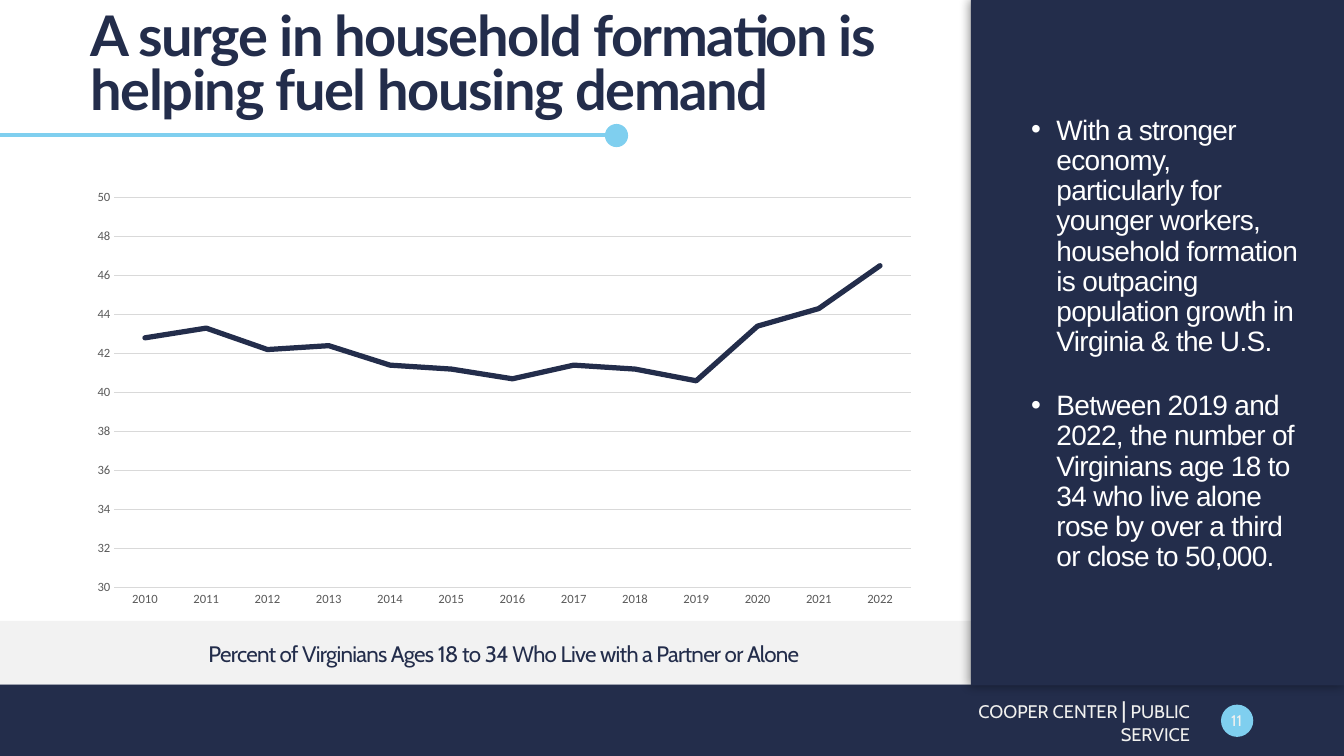
from lxml import etree
from pptx import Presentation
from pptx.chart.data import CategoryChartData
from pptx.dml.color import RGBColor
from pptx.enum.chart import XL_CHART_TYPE, XL_TICK_MARK
from pptx.enum.shapes import MSO_CONNECTOR, MSO_SHAPE
from pptx.enum.text import MSO_ANCHOR, PP_ALIGN
from pptx.oxml.ns import qn
from pptx.util import Emu, Pt

RECT, OVAL = MSO_SHAPE.RECTANGLE, MSO_SHAPE.OVAL
STRAIGHT = MSO_CONNECTOR.STRAIGHT
LINE = XL_CHART_TYPE.LINE
NO_TICK = XL_TICK_MARK.NONE
LEFT, CENTER, RIGHT = PP_ALIGN.LEFT, PP_ALIGN.CENTER, PP_ALIGN.RIGHT
TOP, MIDDLE, BOTTOM = MSO_ANCHOR.TOP, MSO_ANCHOR.MIDDLE, MSO_ANCHOR.BOTTOM

NAVY, SKY, WHITE = "232D4B", "7FCFEF", "FFFFFF"
PALE, PANEL, GRID, LABEL = "F1F1EF", "F2F2F2", "D9D9D9", "595959"

YEARS = [str(year) for year in range(2010, 2023)]
SHARES = [42.8, 43.3, 42.2, 42.4, 41.4, 41.2, 40.7, 41.4, 41.2, 40.6, 43.4, 44.3, 46.5]
TITLE = "A surge in household formation is helping fuel housing demand"
POINTS = [
    "With a stronger economy, particularly for younger workers, household formation "
    "is outpacing population growth in Virginia & the U.S.",
    "Between 2019 and 2022, the number of Virginians age 18 to 34 who live alone "
    "rose by over a third or close to 50,000.",
]
CAPTION = "Percent of Virginians Ages 18 to 34 Who Live with a Partner or Alone"
FOOTER = [("COOPER CENTER ", 13), ("|", 16), (" PUBLIC SERVICE", 13)]


def px(n):
    return Emu(n * 9144)


def rgb(value):
    return RGBColor.from_string(value)


class Deck:
    """Holds the style and the current slide, and draws each kind of element."""

    def __init__(self, width, height):
        self.prs = Presentation()
        self.prs.slide_width, self.prs.slide_height = px(width), px(height)
        self.s = self.prs.slides.add_slide(self.prs.slide_layouts[6])

    def shape(self, kind, box, fill, shadow=False):
        sp = self.s.shapes.add_shape(kind, *map(px, box))
        sp.fill.solid()
        sp.fill.fore_color.rgb = rgb(fill)
        sp.line.fill.background()
        sp.shadow.inherit = False
        if shadow:
            effects = sp._element.spPr.find(qn("a:effectLst"))
            outer = etree.SubElement(effects, qn("a:outerShdw"), blurRad=str(Pt(7)),
                                     dist=str(Pt(1)), dir="10800000", algn="r", rotWithShape="0")
            color = etree.SubElement(outer, qn("a:srgbClr"), val="000000")
            etree.SubElement(color, qn("a:alpha"), val="40000")

    def line(self, x1, y1, x2, y2, color, width):
        cxn = self.s.shapes.add_connector(STRAIGHT, *map(px, (x1, y1, x2, y2)))
        cxn.line.color.rgb = rgb(color)
        cxn.line.width = Pt(width)
        etree.SubElement(cxn._element.spPr, qn("a:effectLst"))

    def text(self, box, paragraphs, size=13, font="Cabin", color=NAVY, bold=False, align=LEFT,
             anchor=TOP, leading=1.0, after=0, spacing=0, bullet=False, bottom=5):
        tf = self.s.shapes.add_textbox(*map(px, box)).text_frame
        tf.word_wrap = True
        tf.vertical_anchor = anchor
        tf.margin_bottom = px(bottom)
        for i, runs in enumerate(paragraphs):
            p = tf.add_paragraph() if i else tf.paragraphs[0]
            p.alignment, p.line_spacing, p.space_after = align, leading, Pt(after)
            if bullet:
                pPr = p._p.get_or_add_pPr()
                pPr.set("marL", str(px(25)))
                pPr.set("indent", str(px(-25)))
                etree.SubElement(pPr, qn("a:buFont"), typeface="Arial")
                etree.SubElement(pPr, qn("a:buChar"), char="•")
            for words, points in [(runs, size)] if isinstance(runs, str) else runs:
                r = p.add_run()
                r.text = words
                r.font.size, r.font.name, r.font.bold = Pt(points), font, bold
                r.font.color.rgb = rgb(color)
                if spacing:
                    r._r.get_or_add_rPr().set("spc", str(int(spacing * 100)))

    def line_chart(self, box, categories, name, values, low, high, step):
        data = CategoryChartData()
        data.categories = categories
        data.add_series(name, values)
        chart = self.s.shapes.add_chart(LINE, *map(px, box), data).chart
        chart.has_legend = chart.has_title = False
        chart.font.name, chart.font.size = "Calibri", Pt(10)
        for axis in (chart.category_axis, chart.value_axis):
            axis.major_tick_mark = axis.minor_tick_mark = NO_TICK
            font = axis.tick_labels.font
            font.name, font.size = "Calibri", Pt(9)
            font.color.rgb = rgb(LABEL)
        value_axis = chart.value_axis
        value_axis.minimum_scale, value_axis.maximum_scale = low, high
        value_axis.major_unit = step
        value_axis.format.line.fill.background()
        for rule in (chart.category_axis.format.line, value_axis.major_gridlines.format.line):
            rule.color.rgb = rgb(GRID)
            rule.width = Pt(0.75)
        chart.plots[0].vary_by_categories = False
        series = chart.plots[0].series[0]
        series.smooth = False
        series.format.line.color.rgb = rgb(NAVY)
        series.format.line.width = Pt(3.75)
        series._element.find(qn("c:spPr")).find(qn("a:ln")).set("cap", "rnd")


def main():
    deck = Deck(1333, 750)
    deck.shape(RECT, (0, 679, 1333, 71), NAVY)
    deck.shape(OVAL, (600, 123, 23, 23), SKY)
    deck.line(0, 134, 600, 134, SKY, 2.25)
    deck.shape(OVAL, (1211, 699, 32, 32), SKY)
    deck.shape(RECT, (0, 616, 965, 63), PANEL)
    deck.shape(RECT, (963, 0, 370, 680), NAVY, shadow=True)
    deck.text((80, 60, 840, 60), [TITLE], size=40, font="Lato", bold=True, anchor=BOTTOM,
              leading=0.8, spacing=-1, bottom=0)
    deck.text((1013, 110, 290, 525), POINTS, size=20, font="Arial", color=WHITE,
              leading=0.9, after=24, spacing=-0.5, bullet=True)
    deck.text((80, 633, 840, 29), [CAPTION], size=16, align=CENTER, leading=0.9, spacing=-0.5)
    deck.text((920, 695, 270, 40), [FOOTER], color=PALE, align=RIGHT, anchor=MIDDLE)
    deck.text((1204, 697, 45, 35), ["11"], size=11, color=PALE, align=CENTER, anchor=MIDDLE)
    deck.line_chart((80, 180, 840, 430), YEARS, "Series 1", SHARES, 30, 50, 2)
    deck.prs.save("out.pptx")


if __name__ == "__main__":
    main()
